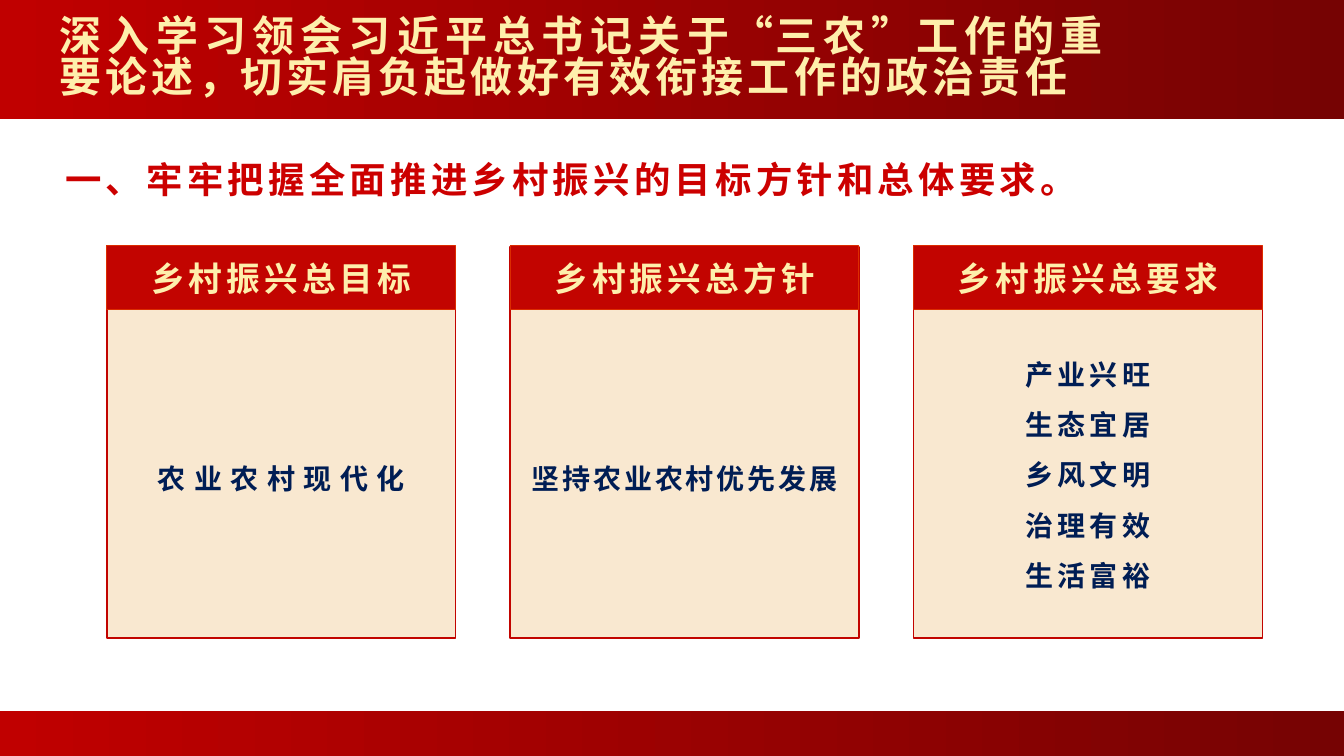
"""Build the slide on the goals, policy and requirements of rural revitalisation."""
from pptx import Presentation
from pptx.dml.color import RGBColor
from pptx.enum.shapes import MSO_SHAPE
from pptx.enum.text import MSO_ANCHOR, MSO_AUTO_SIZE, PP_ALIGN
from pptx.oxml.ns import qn
from pptx.util import Inches, Pt
from lxml.etree import SubElement

FONT = "Noto Sans CJK SC"
RED = RGBColor(0xC2, 0x04, 0x00)
BAND_START = RGBColor(0xC0, 0x00, 0x00)
BAND_END = RGBColor(0x76, 0x03, 0x03)
HEADING = RGBColor(0xCC, 0x00, 0x00)
EDGE = RGBColor(0xDC, 0x2C, 0x00)
CREAM = RGBColor(0xF9, 0xE8, 0xD0)
GOLD = RGBColor(0xFE, 0xEF, 0xAC)
NAVY = RGBColor(0x00, 0x1D, 0x54)

TITLE_RUNS = [
    ("深入学习领会习近平总书记关", 3), ("于", -3), ("“", 0), ("三农", 3),
    ("”", -3), ("工作的重要论述", 3), ("，", -3),
    ("切实肩负起做好有效衔接工作的政治责任", 3),
]
CARDS = [
    ("乡村振兴总目标", ["农业农村现代化"], 6, 3.18),
    ("乡村振兴总方针", ["坚持农业农村优先发展"], 2, 3.18),
    ("乡村振兴总要求",
     ["产业兴旺", "生态宜居", "乡风文明", "治理有效", "生活富裕"], 3, 3.11),
]
CARD_LEFT, CARD_STEP, CARD_WIDTH = 1.06, 4.0, 3.46


class SlideBuilder:
    """Hold the text style and the current slide."""

    def __init__(self, slide):
        self.slide = slide
        self.shapes = slide.shapes

    def run(self, p, text, size, color, spacing):
        r = p.add_run()
        r.text = text
        r.font.size = Pt(size)
        r.font.bold = True
        r.font.name = FONT
        r.font.color.rgb = color
        rpr = r.font._element
        rpr.set("spc", str(spacing * 100))
        SubElement(rpr, qn("a:ea")).set("typeface", FONT)

    def lines(self, tf, texts, size, color, spacing, align, leading=1.0):
        tf.vertical_anchor = MSO_ANCHOR.MIDDLE
        for i, text in enumerate(texts):
            p = tf.add_paragraph() if i else tf.paragraphs[0]
            p.alignment = align
            p.line_spacing = leading
            self.run(p, text, size, color, spacing)

    def band(self, top, height):
        sp = self.shapes.add_shape(MSO_SHAPE.RECTANGLE, 0, Inches(top),
                                   Inches(13.35), Inches(height))
        sp.shadow.inherit = False
        sp.line.fill.background()
        sp.fill.gradient()
        sp.fill.gradient_angle = 0
        for stop, color in zip(sp.fill.gradient_stops, (BAND_START, BAND_END)):
            stop.color.rgb = color

    def title(self, runs):
        sp = self.shapes.title
        self.shapes._spTree.append(sp._element)
        sp.left, sp.top = Inches(0), Inches(0.08)
        sp.width, sp.height = Inches(11.06), Inches(1.02)
        tf = sp.text_frame
        tf.auto_size = MSO_AUTO_SIZE.NONE
        tf.word_wrap = True
        tf.vertical_anchor = MSO_ANCHOR.MIDDLE
        tf.margin_left, tf.margin_right = Inches(0.59), Inches(0.08)
        tf.margin_top = tf.margin_bottom = Inches(0.04)
        p = tf.paragraphs[0]
        p.alignment = PP_ALIGN.JUSTIFY
        p.line_spacing = 0.82
        for text, spacing in runs:
            self.run(p, text, 30, GOLD, spacing)

    def heading(self, text):
        sp = self.shapes.add_textbox(Inches(0.55), Inches(1.42),
                                     Inches(10.29), Inches(0.62))
        tf = sp.text_frame
        tf.word_wrap = False
        tf.auto_size = MSO_AUTO_SIZE.SHAPE_TO_FIT_TEXT
        self.lines(tf, [text], 26, HEADING, 3, PP_ALIGN.LEFT, 1.2)

    def box(self, shapes, kind, left, top, height, fill, line, weight):
        sp = shapes.add_shape(kind, Inches(left), Inches(top),
                              Inches(CARD_WIDTH), Inches(height))
        sp.shadow.inherit = False
        sp.fill.solid()
        sp.fill.fore_color.rgb = fill
        sp.line.color.rgb = line
        sp.line.width = Pt(weight)
        return sp

    def card(self, left, header, texts, spacing, height):
        shapes = self.shapes.add_group_shape().shapes
        self.box(shapes, MSO_SHAPE.FLOWCHART_PROCESS, left, 2.45, 3.88,
                 CREAM, RED, 1)
        head = self.box(shapes, MSO_SHAPE.RECTANGLE, left, 2.44, 0.63,
                        RED, EDGE, 0.75)
        self.lines(head.text_frame, [header], 24, GOLD, 3, PP_ALIGN.CENTER)
        body = shapes.add_textbox(Inches(left), Inches(3.07),
                                  Inches(CARD_WIDTH), Inches(height))
        tf = body.text_frame
        tf.word_wrap = True
        tf.margin_left = tf.margin_right = Inches(0.2)
        self.lines(tf, texts, 20, NAVY, spacing, PP_ALIGN.CENTER, 1.5)


def main():
    prs = Presentation()
    prs.slide_width, prs.slide_height = Inches(13.33), Inches(7.5)
    s = SlideBuilder(prs.slides.add_slide(prs.slide_layouts[5]))
    s.band(0, 1.18)
    s.band(7.05, 0.47)
    s.title(TITLE_RUNS)
    s.heading("一、牢牢把握全面推进乡村振兴的目标方针和总体要求。")
    for i, card in enumerate(CARDS):
        s.card(CARD_LEFT + i * CARD_STEP, *card)
    prs.save("out.pptx")


if __name__ == "__main__":
    main()
